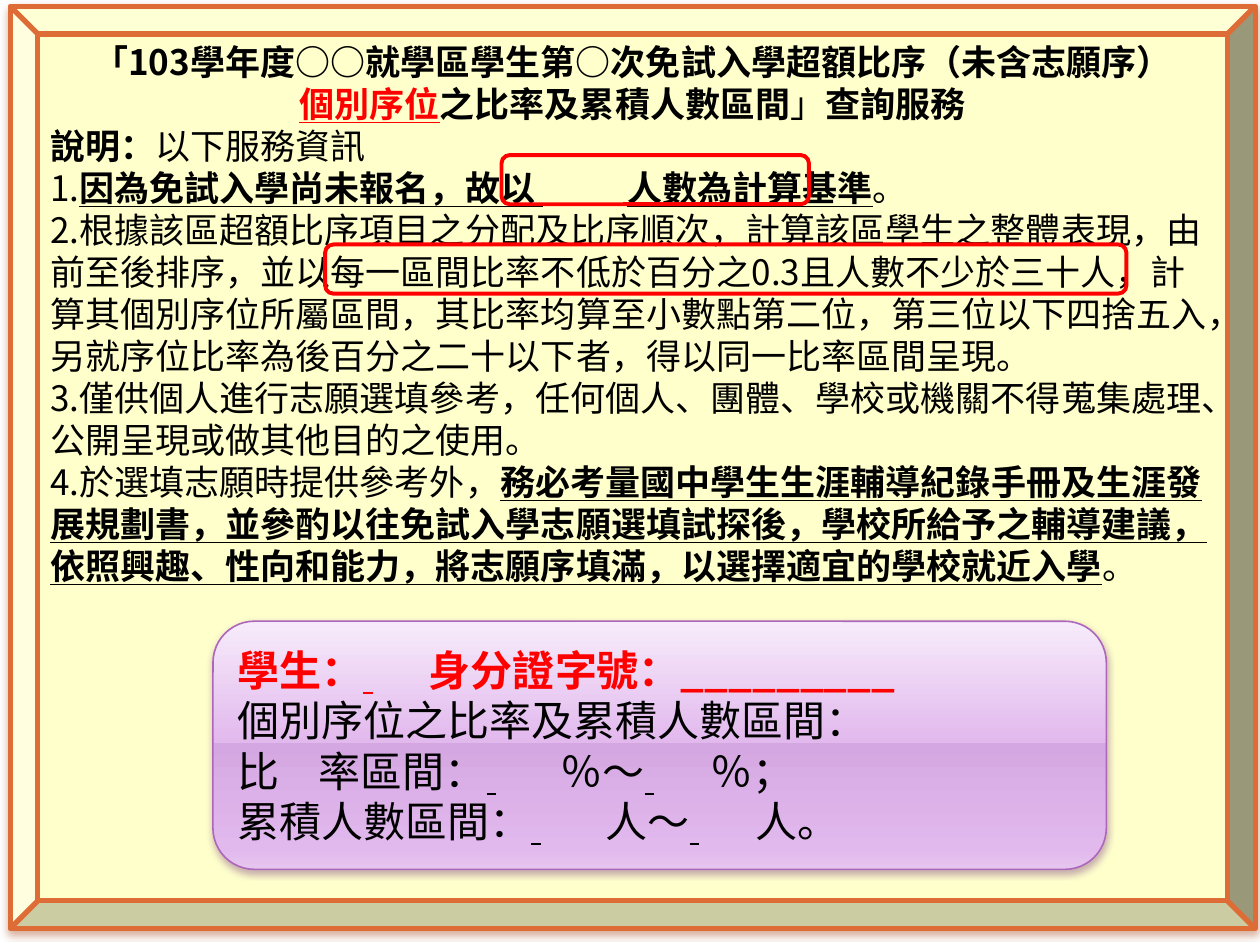
import pptx
import pptx.util
import pptx.dml.color
import pptx.enum.shapes
import pptx.enum.text
import pptx.oxml
import pptx.oxml.ns

Pt = pptx.util.Pt
SHAPE = pptx.enum.shapes.MSO_SHAPE
ALIGN = pptx.enum.text.PP_ALIGN
ANCHOR = pptx.enum.text.MSO_ANCHOR
FONT = "Noto Sans CJK SC"
COLORS = {
    "black": "000000", "red": "FF0000", "cream": "FFFFCC", "orange": "DE6C36",
    "orange shadow": "9C3707", "purple": "AC66BB", "purple shadow": "6E307B",
}
PURPLE_STOPS = [(0, "F7EBFB"), (49, "E2B9ED"), (49, "D5A7E2"), (92, "E2B9ED"), (100, "E6C6EF")]

# Each run: text, style letters (b bold, u underline, r red, l Lato), extra spacing in points
NOTICE = [
    (ALIGN.CENTER, [("「103學年度○○就學區學生第○次免試入學超額比序（未含志願序）", "b", 0)]),
    (ALIGN.CENTER, [("個別序位", "bur", 0), ("之比率及累積人數區間", "b", 0),
                    ("」", "", 0), ("查詢服務", "b", 0)]),
    (ALIGN.LEFT, [("說明：", "b", 0), ("以下服務資訊", "l", 0)]),
    (ALIGN.LEFT, [("1.", "", 0), ("因為免試入學尚未報名，故以", "bu", 0), (" ", "bu", 48),
                  ("人數為計算基準", "bu", 0), ("。", "", 0)]),
    (ALIGN.LEFT, [("2.根據該區超額比序項目之分配及比序順次，計算該區學生之整體表現，由前至後排序，"
                   "並以每一區間比率不低於百分之0.3且人數不少於三十人，計算其個別序位所屬區間，"
                   "其比率均算至小數點第二位，第三位以下四捨五入，另就序位比率為後百分之二十以下者，"
                   "得以同一比率區間呈現。", "", 0)]),
    (ALIGN.LEFT, [("3.僅供個人進行志願選填參考，任何個人、團體、學校或機關不得蒐集處理、"
                   "公開呈現或做其他目的之使用。", "", 0)]),
    (ALIGN.LEFT, [("4.於選填志願時提供參考外，", "", 0),
                  ("務必考量國中學生生涯輔導紀錄手冊及生涯發展規劃書，並參酌以往免試入學志願選填試探後，"
                   "學校所給予之輔導建議，依照興趣、性向和能力，將志願序填滿，"
                   "以選擇適宜的學校就近入學", "bu", 0), ("。", "", 0)]),
]
SHORT_BLANK = (" ", "u", 32)
LONG_BLANK = (" ", "u", 37)
RESULT = [
    (ALIGN.LEFT, [("學生：", "br", 0), (" ", "bur", 32), ("身分證字號：_________", "br", 0)]),
    (ALIGN.LEFT, [("個別序位之比率及累積人數區間：", "", 0)]),
    (ALIGN.LEFT, [("比", "", 0), (" ", "", 17), ("率區間：", "", 0), LONG_BLANK,
                  ("％～", "", 0), SHORT_BLANK, ("％；", "", 0)]),
    (ALIGN.LEFT, [("累積人數區間：", "", 0), LONG_BLANK, ("人～", "", 0),
                  SHORT_BLANK, ("人。", "", 0)]),
]
HIGHLIGHTS = [(286.6, 88.6, 175.7, 28.1), (185.8, 139.7, 457.9, 28.1)]


def rgb(name):
    return pptx.dml.color.RGBColor.from_string(COLORS[name])


def drawing_xml(tag, body):
    namespace = pptx.oxml.ns.nsdecls("a")
    return pptx.oxml.parse_xml(f"<a:{tag} {namespace}>{body}</a:{tag}>")


def add_box(page, kind, place, line, weight):
    box = page.shapes.add_shape(kind, *(Pt(length) for length in place))
    box.shadow.inherit = False
    box.fill.background()
    box.line.color.rgb = rgb(line)
    box.line.width = Pt(weight)
    return box


def add_shadow(box, color):
    effects = box._element.spPr.find(pptx.oxml.ns.qn("a:effectLst"))
    effects.getparent().replace(effects, drawing_xml(
        "effectLst",
        '<a:outerShdw blurRad="50800" dist="25400" dir="5400000" rotWithShape="0">'
        f'<a:srgbClr val="{COLORS[color]}"><a:alpha val="38000"/></a:srgbClr></a:outerShdw>'))


def fill_gradient(box, stops):
    box.fill.gradient()
    box.fill.gradient_angle = 270
    old = box._element.spPr.find(".//" + pptx.oxml.ns.qn("a:gsLst"))
    body = "".join(f'<a:gs pos="{position * 1000}"><a:srgbClr val="{color}"/></a:gs>'
                   for position, color in stops)
    old.getparent().replace(old, drawing_xml("gsLst", body))


def write(box, paragraphs, size, anchor):
    frame = box.text_frame
    frame.word_wrap = True
    frame.vertical_anchor = anchor
    for index, (alignment, runs) in enumerate(paragraphs):
        para = frame.add_paragraph() if index else frame.paragraphs[0]
        para.alignment = alignment
        for text, style, spacing in runs:
            span = para.add_run()
            span.text = text
            span.font.name = "Lato" if "l" in style else FONT
            span.font.size = Pt(size)
            span.font.bold = "b" in style
            span.font.underline = "u" in style
            span.font.color.rgb = rgb("red" if "r" in style else "black")
            if spacing:
                span.font._element.set("spc", str(spacing * 100))


deck = pptx.Presentation()
deck.slide_width, deck.slide_height = Pt(720), Pt(540)
page = deck.slides.add_slide(deck.slide_layouts[6])

notice = add_box(page, SHAPE.BEVEL, (5.8, 3.6, 711.4, 527), "orange", 3)
notice.adjustments[0] = 0.03
notice.fill.solid()
notice.fill.fore_color.rgb = rgb("cream")
add_shadow(notice, "orange shadow")
write(notice, NOTICE, 20, ANCHOR.TOP)

result = add_box(page, SHAPE.ROUNDED_RECTANGLE, (121.7, 355, 510.5, 141.8), "purple", 0.9)
fill_gradient(result, PURPLE_STOPS)
add_shadow(result, "purple shadow")
write(result, RESULT, 24, ANCHOR.MIDDLE)

for place in HIGHLIGHTS:
    add_box(page, SHAPE.ROUNDED_RECTANGLE, place, "red", 2.25)

deck.save("out.pptx")
